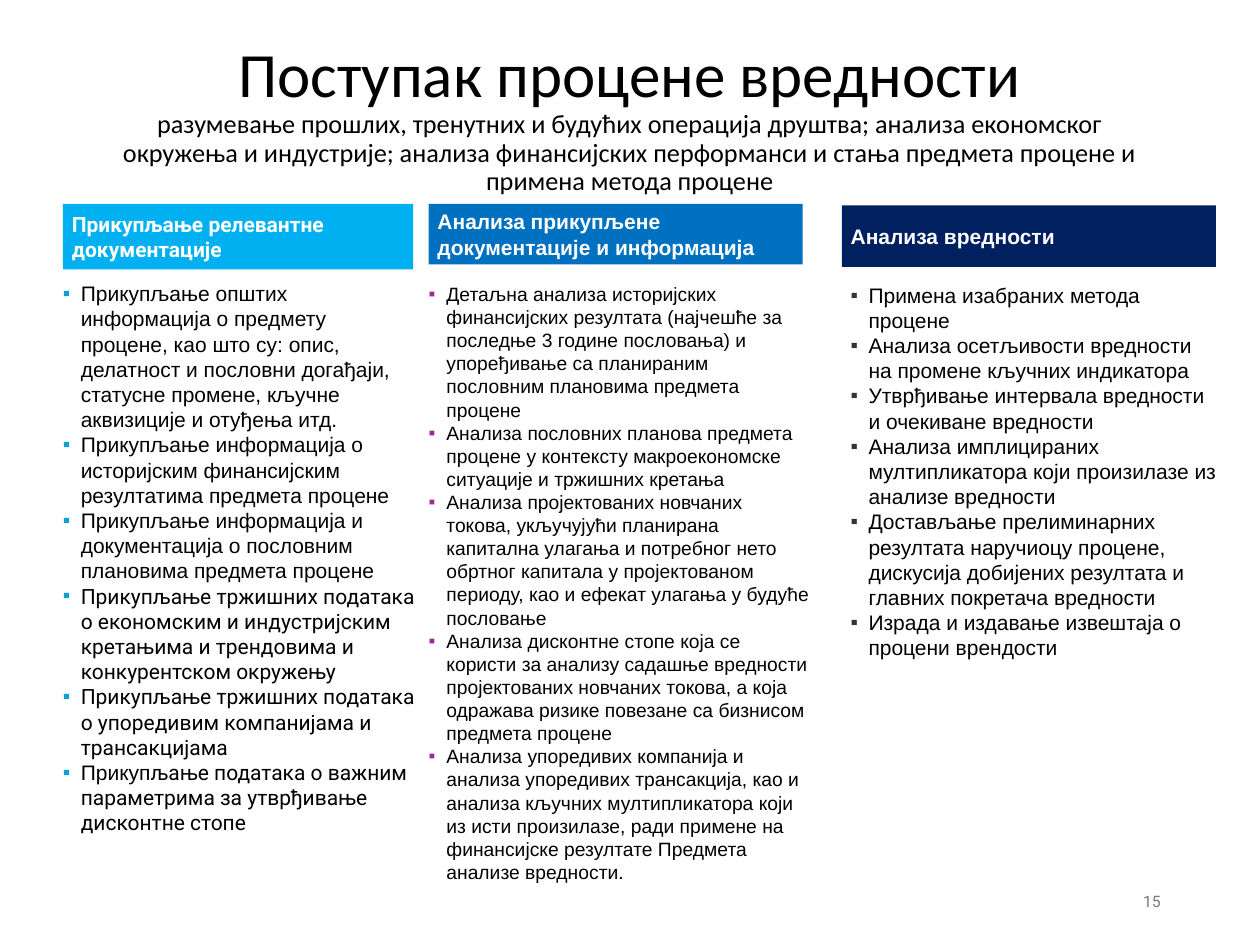
from lxml import etree
from pptx import Presentation
from pptx.dml.color import RGBColor
from pptx.enum.shapes import MSO_SHAPE
from pptx.enum.text import MSO_ANCHOR as Anchor, MSO_AUTO_SIZE as AutoSize, PP_ALIGN as Align
from pptx.oxml.ns import qn
from pptx.util import Cm, Pt

BLACK = RGBColor(0x00, 0x00, 0x00)
WHITE = RGBColor(0xFF, 0xFF, 0xFF)
GREY = RGBColor(0x79, 0x79, 0x79)
SKY = RGBColor(0x00, 0xB0, 0xF0)
BLUE = RGBColor(0x00, 0x70, 0xC0)
NAVY = RGBColor(0x00, 0x20, 0x60)
CYAN_BULLET = RGBColor(0x0F, 0x9E, 0xD5)
PURPLE_BULLET = RGBColor(0xA0, 0x2B, 0x93)
DARK_BULLET = RGBColor(0x34, 0x34, 0x34)

TITLE = "Поступак процене вредности"
SUBTITLE = (
    "разумевање прошлих, тренутних и будућих операција друштва; анализа економског "
    "окружења и индустрије; анализа финансијских перформанси и стања предмета процене "
    "и примена метода процене"
)

COLLECTION = [
    "Прикупљање општих информација о предмету процене, као што су: опис, делатност и "
    "пословни догађаји, статусне промене, кључне аквизиције и отуђења итд.",
    "Прикупљање информација о историјским финансијским резултатима предмета процене",
    "Прикупљање информација и документација о пословним плановима предмета процене",
    [("Прикупљање тржишних података о економским и индустријским кретањима и трендовима "
      "и конкурентском окружењу", "Roboto")],
    [("Прикупљање тржишних података о упоредивим компанијама и трансакцијама", "Roboto")],
    [("Прикуп", "Arial"),
     ("љање података о важним параметрима за утврђивање дисконтне стопе", "Roboto")],
]
ANALYSIS = [
    "Детаљна анализа историјских финансијских резултата (најчешће за последње 3 године "
    "пословања) и упоређивање са планираним пословним плановима предмета процене",
    "Анализа пословних планова предмета процене у контексту макроекономске ситуације и "
    "тржишних кретања",
    "Анализа пројектованих новчаних токова, укључујући планирана капитална улагања и "
    "потребног нето обртног капитала у пројектованом периоду, као и ефекат улагања у "
    "будуће пословање",
    "Анализа дисконтне стопе која се користи за анализу садашње вредности пројектованих "
    "новчаних токова, а која одражава ризике повезане са бизнисом предмета процене",
    "Анализа упоредивих компанија и анализа упоредивих трансакција, као и анализа кључних "
    "мултипликатора који из исти произилазе, ради примене на финансијске резултате "
    "Предмета анализе вредности.",
]
VALUATION = [
    "Примена изабраних метода процене",
    "Анализа осетљивости вредности на промене кључних индикатора",
    "Утврђивање интервала вредности и очекиване вредности",
    "Анализа имплицираних мултипликатора који произилазе из анализе вредности",
    "Достављање прелиминарних резултата наручиоцу процене, дискусија добијених резултата "
    "и главних покретача вредности",
    "Израда и издавање извештаја о процени врендости",
]

# Header text, font, fill, place; list items, size, bullet colour, place (cm)
COLUMNS = [
    ("Прикупљање релевантне документације", "Roboto", SKY, (1.27, 4.11, 7.06, 1.32),
     COLLECTION, 12, CYAN_BULLET, (1.09, 5.56, 7.52, 11.48)),
    ("Анализа прикупљене документације и информација", "Arial", BLUE, (8.64, 4.11, 7.54, 1.22),
     ANALYSIS, 11, PURPLE_BULLET, (8.46, 5.59, 8.08, 13.46)),
    ("Анализа вредности", "Arial", NAVY, (16.97, 4.14, 7.54, 1.24),
     VALUATION, 12, DARK_BULLET, (16.97, 5.59, 7.8, 7.87)),
]


class SlideBuilder:
    body_font = "Arial"
    inset_x, inset_y = Cm(0.18), Cm(0.1)
    indent = Cm(0.36)

    def __init__(self, page):
        self.page = page

    def style(self, font, name, size, color, bold=False):
        font.name, font.size, font.bold = name, Pt(size), bold
        font.color.rgb = color

    def tighten(self, frame):
        frame.margin_left = frame.margin_right = self.inset_x
        frame.margin_top = frame.margin_bottom = self.inset_y

    def text_frame(self, place, anchor):
        frame = self.page.shapes.add_textbox(*map(Cm, place)).text_frame
        frame.word_wrap = True
        frame.vertical_anchor = anchor
        return frame

    def heading(self, title, subtitle, place):
        para = self.text_frame(place, Anchor.MIDDLE).paragraphs[0]
        para.alignment, para.line_spacing = Align.CENTER, 0.9
        for text, size in ((title, 36), (subtitle, 15)):
            if para.runs:
                para.add_line_break()
            span = para.add_run()
            span.text = text
            self.style(span.font, "Calibri", size, BLACK)

    def page_number(self, text, place):
        para = self.text_frame(place, Anchor.MIDDLE).paragraphs[0]
        para.text, para.alignment = text, Align.RIGHT
        self.style(para.font, "Roboto", 9, GREY)

    def header(self, text, font_name, fill, place):
        box = self.page.shapes.add_shape(MSO_SHAPE.RECTANGLE, *map(Cm, place))
        box.shadow.inherit = False
        box.fill.solid()
        box.fill.fore_color.rgb = fill
        box.line.fill.background()
        frame = box.text_frame
        frame.word_wrap = True
        frame.vertical_anchor = Anchor.MIDDLE
        self.tighten(frame)
        para = frame.paragraphs[0]
        para.text, para.alignment = text, Align.LEFT
        self.style(para.font, font_name, 12, WHITE, bold=True)

    def add_bullet(self, para, color):
        props = para._p.get_or_add_pPr()
        props.set("marL", str(self.indent))
        props.set("indent", str(-self.indent))
        tint = etree.SubElement(props, qn("a:buClr"))
        etree.SubElement(tint, qn("a:srgbClr")).set("val", str(color))
        etree.SubElement(props, qn("a:buFont")).set("typeface", self.body_font)
        etree.SubElement(props, qn("a:buChar")).set("char", "▪")

    def bullet_list(self, items, size, color, place):
        frame = self.text_frame(place, Anchor.TOP)
        frame.auto_size = AutoSize.SHAPE_TO_FIT_TEXT
        self.tighten(frame)
        for index, item in enumerate(items):
            para = frame.add_paragraph() if index else frame.paragraphs[0]
            self.add_bullet(para, color)
            parts = [(item, self.body_font)] if isinstance(item, str) else item
            self.style(para.font, parts[0][1], size, BLACK)
            for text, font_name in parts:
                span = para.add_run()
                span.text = text
                if font_name != parts[0][1]:
                    span.font.name = font_name


def main():
    deck = Presentation()
    deck.slide_width, deck.slide_height = Cm(25.4), Cm(19.05)
    builder = SlideBuilder(deck.slides.add_slide(deck.slide_layouts[6]))

    # Title and page number
    builder.heading(TITLE, SUBTITLE, (1.75, 1.02, 21.89, 2.79))
    builder.page_number("15", (17.93, 17.65, 5.72, 1.02))

    # Three stages of the valuation
    for title, font, fill, header_place, items, size, bullet, list_place in COLUMNS:
        builder.header(title, font, fill, header_place)
        builder.bullet_list(items, size, bullet, list_place)

    deck.save("out.pptx")


if __name__ == "__main__":
    main()
